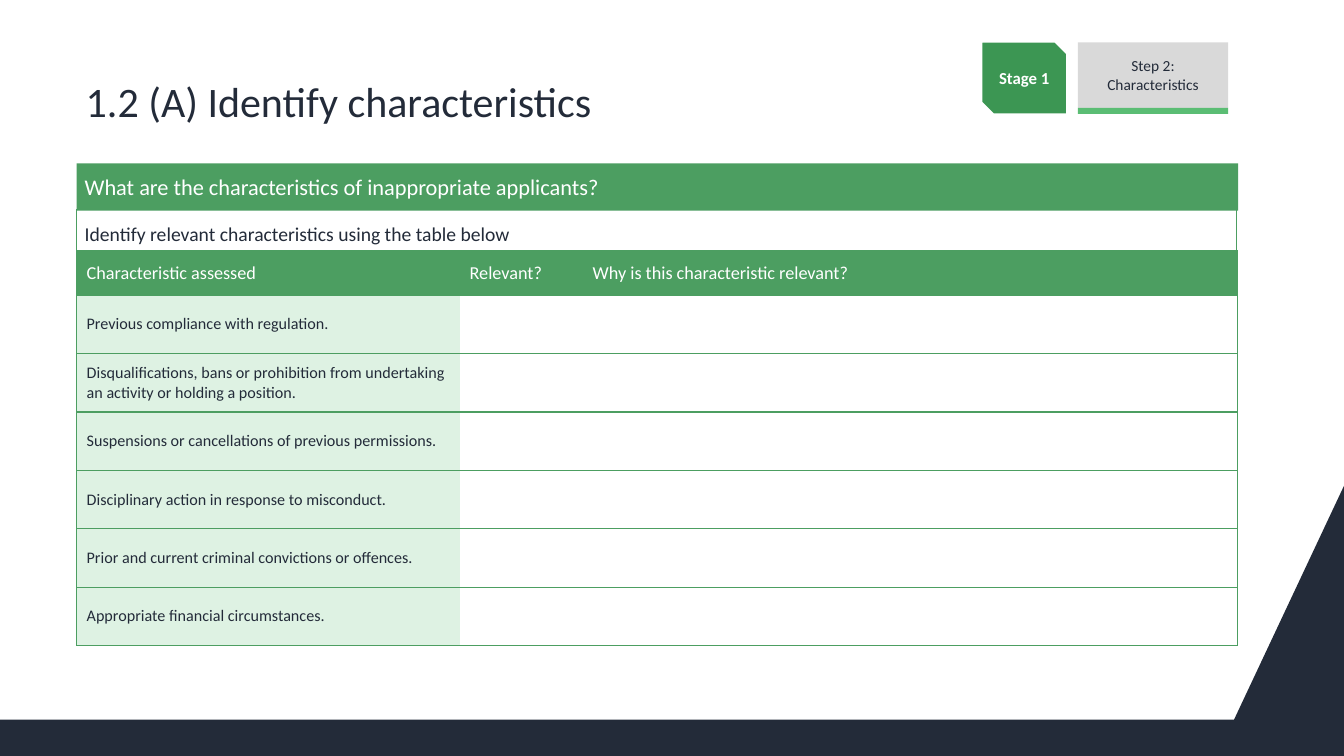
from dataclasses import dataclass

from lxml import etree
from pptx import Presentation
from pptx.dml.color import RGBColor
from pptx.enum.shapes import MSO_SHAPE
from pptx.enum.text import MSO_ANCHOR, MSO_AUTO_SIZE, PP_ALIGN
from pptx.oxml.ns import qn
from pptx.util import Inches, Pt

TOP, MIDDLE = MSO_ANCHOR.TOP, MSO_ANCHOR.MIDDLE
LEFT, CENTER = PP_ALIGN.LEFT, PP_ALIGN.CENTER
NO_AUTOFIT = MSO_AUTO_SIZE.NONE
RECTANGLE, SNIPPED = MSO_SHAPE.RECTANGLE, MSO_SHAPE.SNIP_2_DIAG_RECTANGLE
WIDTH, HEIGHT = Inches(13.33), Inches(7.5)
COMPARISON_LAYOUT = 4


@dataclass(frozen=True)
class Theme:
    font: str = "Calibri"
    navy: str = "232B39"
    white: str = "FFFFFF"
    green: str = "4C9E61"
    stage_green: str = "3C9653"
    step_green: str = "5BBD74"
    pale_green: str = "DEF2E3"
    gray: str = "D9D9D9"
    title: float = 30
    question: float = 16
    instruction: float = 14
    header: float = 13
    stage: float = 12
    cell: float = 11.5
    step: float = 11


THEME = Theme()
HEADERS = ["Characteristic assessed", "Relevant?", "Why is this characteristic relevant?"]
CHARACTERISTICS = [
    "Previous compliance with regulation.",
    "Disqualifications, bans or prohibition from undertaking an activity or holding a position.",
    "Suspensions or cancellations of previous permissions.",
    "Disciplinary action in response to misconduct.",
    "Prior and current criminal convictions or offences.",
    "Appropriate financial circumstances.",
]
COLUMN_SHARES = [28.5, 9.15, 48.7]
HEADER_SHARE, ROW_SHARE = 5.85, 7.73


def across(share):
    """Percentage of the slide's width."""
    return round(WIDTH * share / 100)


def down(share):
    """Percentage of the slide's height."""
    return round(HEIGHT * share / 100)


def box(left, top, width, height):
    return across(left), down(top), across(width), down(height)


def paint(sp, fill=None, line=None, weight=0.75):
    if fill:
        sp.fill.solid()
        sp.fill.fore_color.rgb = RGBColor.from_string(fill)
    if line:
        sp.line.color.rgb = RGBColor.from_string(line)
        sp.line.width = Pt(weight)
    else:
        sp.line.fill.background()


def write(tf, text, size, color, bold=False, align=LEFT, before=0):
    p = tf.paragraphs[0]
    p.text = text
    p.alignment = align
    p.space_before = Pt(before)
    for r in p.runs:
        r.font.name = THEME.font
        r.font.size = Pt(size)
        r.font.bold = bold
        r.font.color.rgb = RGBColor.from_string(color)


def fill_placeholder(sp, area, text, size, color, anchor=MIDDLE, before=0, top_inset=0.05):
    sp.left, sp.top, sp.width, sp.height = area
    tf = sp.text_frame
    tf.auto_size = NO_AUTOFIT
    tf.word_wrap = True
    tf.vertical_anchor = anchor
    tf.margin_left = tf.margin_right = Inches(0.08)
    tf.margin_top, tf.margin_bottom = Inches(top_inset), Inches(0.05)
    write(tf, text, size, color, before=before)


def add_block(slide, kind, area, fill, line=None, weight=0.75):
    sp = slide.shapes.add_shape(kind, *area)
    sp.shadow.inherit = False
    paint(sp, fill, line, weight)
    return sp


def add_label(slide, kind, area, text, size, color, fill, bold=False, line=None, weight=0.75):
    tf = add_block(slide, kind, area, fill, line, weight).text_frame
    tf.word_wrap = True
    tf.vertical_anchor = MIDDLE
    write(tf, text, size, color, bold, CENTER)


def add_footer(slide):
    builder = slide.shapes.build_freeform(0, down(95.2))
    corners = [(0, 100), (100, 100), (100, 64.27), (91.82, 95.2)]
    builder.add_line_segments([(across(x), down(y)) for x, y in corners])
    sp = builder.convert_to_shape()
    sp.shadow.inherit = False
    paint(sp, THEME.navy)


def set_borders(cell, sides):
    """Rule the named sides of a cell and clear the others."""
    tc_pr = cell._tc.get_or_add_tcPr()
    for i, side in enumerate("LRTB"):
        ln = etree.Element(qn(f"a:ln{side}"), w=str(Pt(1)))
        if side in sides:
            fill = etree.SubElement(ln, qn("a:solidFill"))
            etree.SubElement(fill, qn("a:srgbClr"), val=THEME.green)
        else:
            etree.SubElement(ln, qn("a:noFill"))
        tc_pr.insert(i, ln)


def add_characteristics_table(slide):
    rows = [HEADERS] + [[text, "", ""] for text in CHARACTERISTICS]
    heights = [HEADER_SHARE] + [ROW_SHARE] * len(CHARACTERISTICS)
    area = box(5.7, 33.2, sum(COLUMN_SHARES), sum(heights))
    table = slide.shapes.add_table(len(rows), len(HEADERS), *area).table
    table.first_row = table.horz_banding = False
    for column, share in zip(table.columns, COLUMN_SHARES):
        column.width = across(share)
    for i, texts in enumerate(rows):
        table.rows[i].height = down(heights[i])
        for j, text in enumerate(texts):
            cell = table.cell(i, j)
            cell.vertical_anchor = MIDDLE
            cell.fill.solid()
            body_fill = THEME.white if j else THEME.pale_green
            cell.fill.fore_color.rgb = RGBColor.from_string(body_fill if i else THEME.green)
            set_borders(cell, ("LTB", "TB", "RTB")[j])
            if text:
                size, color = (THEME.cell, THEME.navy) if i else (THEME.header, THEME.white)
                write(cell.text_frame, text, size, color)


def main():
    prs = Presentation()
    prs.slide_width, prs.slide_height = WIDTH, HEIGHT
    slide = prs.slides.add_slide(prs.slide_layouts[COMPARISON_LAYOUT])
    title, instruction, spare_left, question, spare_right = slide.placeholders
    for sp in (spare_left, spare_right):
        sp.element.getparent().remove(sp.element)

    add_footer(slide)
    fill_placeholder(title, box(5.78, 6.53, 86.27, 13.47),
                     "1.2 (A) Identify characteristics", THEME.title, THEME.navy)
    fill_placeholder(instruction, box(5.7, 27.73, 86.27, 57.2),
                     "Identify relevant characteristics using the table below",
                     THEME.instruction, THEME.navy, anchor=TOP, before=6, top_inset=0.12)
    paint(instruction, line=THEME.green)
    fill_placeholder(question, box(5.7, 21.6, 86.42, 6.27),
                     "What are the characteristics of inappropriate applicants?",
                     THEME.question, THEME.white, before=10)
    paint(question, THEME.green)

    add_characteristics_table(slide)
    add_label(slide, SNIPPED, box(72.99, 5.47, 6.45, 9.73), "Stage 1", THEME.stage,
              THEME.white, THEME.stage_green, bold=True, line=THEME.white, weight=2)
    add_label(slide, RECTANGLE, box(80.2, 5.6, 11.18, 8.67), "Step 2:\nCharacteristics",
              THEME.step, THEME.navy, THEME.gray)
    add_block(slide, RECTANGLE, box(80.2, 14.27, 11.18, 0.8), THEME.step_green)
    prs.save("out.pptx")


if __name__ == "__main__":
    main()
